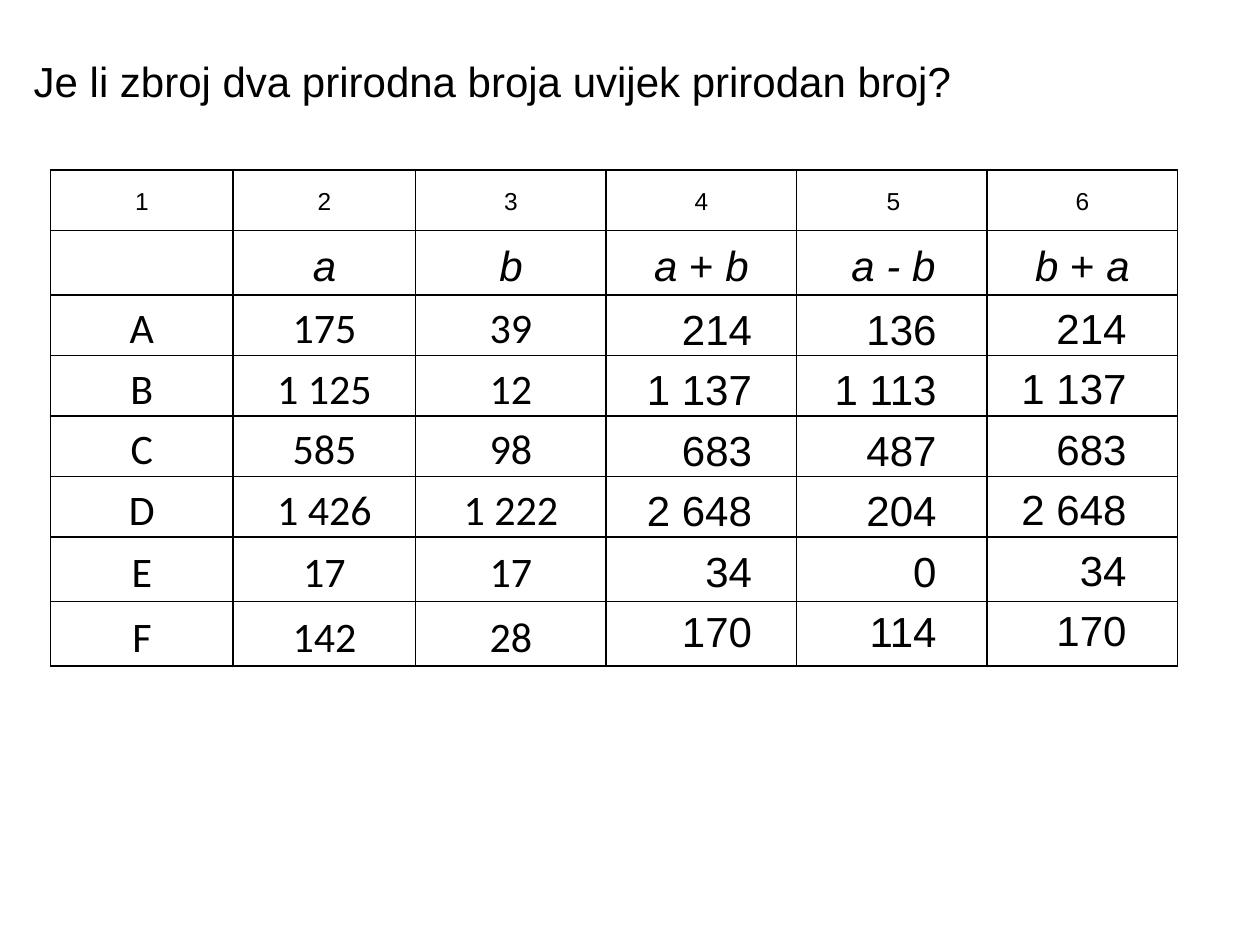
from lxml.etree import fromstring
from pptx import Presentation
from pptx.dml.color import RGBColor
from pptx.enum.text import MSO_ANCHOR, MSO_AUTO_SIZE, PP_ALIGN
from pptx.oxml.ns import nsdecls
from pptx.util import Cm, Pt

COLORS = {"ink": "000000", "page": "FFFFFF"}
INK = RGBColor.from_string(COLORS["ink"])
CELL = {"vertical_anchor": MSO_ANCHOR.MIDDLE, "margin_left": Cm(0.18),
        "margin_right": Cm(0.18), "margin_top": 0, "margin_bottom": 0}
PARA = {"alignment": PP_ALIGN.CENTER, "line_spacing": 1.15}
FRAME = {"word_wrap": True, "auto_size": MSO_AUTO_SIZE.SHAPE_TO_FIT_TEXT}

HEADS = ["a", "b", "a + b", "a - b", "b + a"]
PAIRS = [("A", "175", "39"), ("B", "1 125", "12"), ("C", "585", "98"),
         ("D", "1 426", "1 222"), ("E", "17", "17"), ("F", "142", "28")]
SUMS = ["214", "1 137", "683", "2 648", "34", "170"]
DIFFS = ["136", "1 113", "487", "204", "0", "114"]


def style(item, values):
    """Set every attribute in values on item."""
    for key, value in values.items():
        setattr(item, key, value)


def write(para, text, size=24, face="Arial", italic=False):
    """Add one run of text in the ink colour."""
    run = para.add_run()
    run.text = text
    style(run.font, {"size": Pt(size), "name": face, "italic": italic})
    run.font.color.rgb = INK


deck = Presentation()
deck.slide_width, deck.slide_height = Cm(25.4), Cm(19.05)
slide = deck.slides.add_slide(deck.slide_layouts[6])
slide.background.fill.solid()
slide.background.fill.fore_color.rgb = RGBColor.from_string(COLORS["page"])

# Table
widths = [3.68] * 2 + [3.84] * 4
heights = [1.22, 1.3] + [1.22] * 4 + [1.3] * 2
grid = slide.shapes.add_table(
    len(heights), len(widths), Cm(1.02), Cm(3.43),
    Cm(sum(widths)), Cm(sum(heights))).table
style(grid, {"first_row": False, "horz_banding": False})
for col, width in zip(grid.columns, widths):
    col.width = Cm(width)
for row, height in zip(grid.rows, heights):
    row.height = Cm(height)

rows = [[str(n) for n in range(1, 7)], [""] + HEADS]
rows += [[*pair, "", "", ""] for pair in PAIRS]
for r, row in enumerate(rows):
    for c, text in enumerate(row):
        cell = grid.cell(r, c)
        style(cell, CELL)
        cell.fill.background()
        props = cell._tc.get_or_add_tcPr()
        for i, side in enumerate("LRTB"):
            props.insert(i, fromstring(
                f'<a:ln{side} {nsdecls("a")} w="{Pt(1)}"><a:solidFill>'
                f'<a:srgbClr val="{COLORS["ink"]}"/></a:solidFill></a:ln{side}>'))
        para = cell.text_frame.paragraphs[0]
        style(para, PARA)
        if r < 2 and c == 4:
            para._p.get_or_add_pPr().set("marL", str(Cm(0.64)))
            para._p.get_or_add_pPr().set("indent", str(Cm(-0.58)))
        if r == 0:
            write(para, text, size=14)
        elif r == 1:
            for part in filter(None, text.partition(" + ")):
                write(para, part, italic=part != " + ")
        elif text:
            write(para, text, face="Calibri")

# Answers over the last three columns, then the question
notes = []
for left, top, width, values in [(12.62, 5.99, 2.79, SUMS),
                                 (16.23, 5.99, 2.9, DIFFS),
                                 (20.17, 5.97, 2.79, SUMS)]:
    for i, text in enumerate(values):
        notes.append((left, top + i * 1.22, width, text, PP_ALIGN.RIGHT))
notes.append((0.43, 0.99, 21.13,
              "Je li zbroj dva prirodna broja uvijek prirodan broj?",
              PP_ALIGN.LEFT))
for left, top, width, text, align in notes:
    box = slide.shapes.add_textbox(Cm(left), Cm(top), Cm(width), Cm(1.27))
    style(box.text_frame, FRAME)
    para = box.text_frame.paragraphs[0]
    para.alignment = align
    write(para, text)

deck.save("out.pptx")
